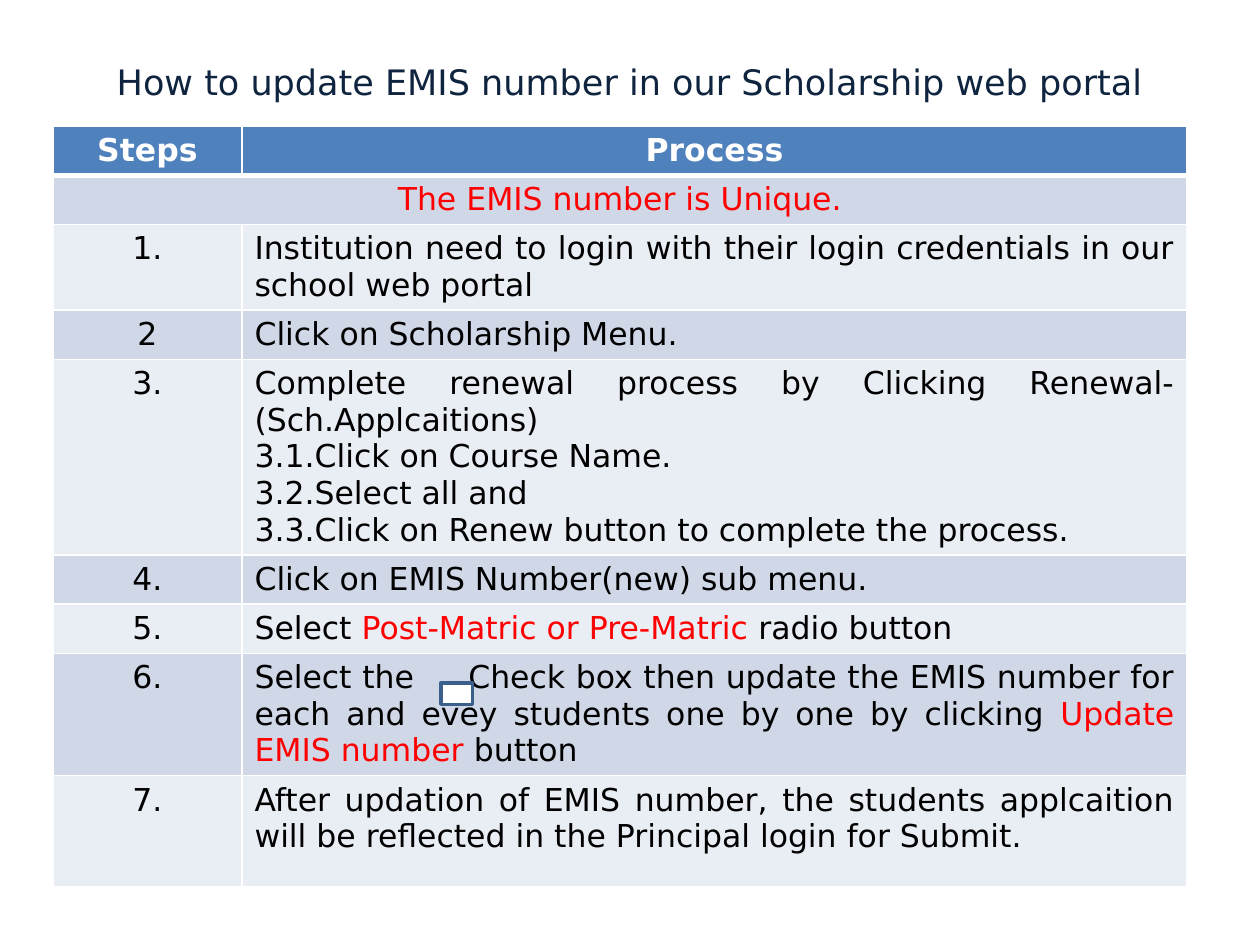
from dataclasses import dataclass

from lxml import etree
from pptx import Presentation
from pptx import util as u
from pptx.dml.color import RGBColor
from pptx.enum import shapes, text
from pptx.oxml.ns import qn


@dataclass(frozen=True)
class Theme:
    font: str = "DejaVu Sans"
    title_size: int = 20
    body_size: int = 18
    navy: str = "0F243E"
    header: str = "4F81BD"
    bands: tuple = ("E9EDF4", "D0D8E8")
    white: str = "FFFFFF"
    black: str = "000000"
    red: str = "FF0000"
    outline: str = "3A5F8C"


theme = Theme()


def format_run(run, size, color, bold=False):
    run.font.name = theme.font
    run.font.size = u.Pt(size)
    run.font.bold = bold
    run.font.color.rgb = RGBColor.from_string(color)


def add_border(cell, side, points):
    line = etree.SubElement(cell._tc.get_or_add_tcPr(), qn(f"a:ln{side}"), w=str(u.Pt(points)))
    fill = etree.SubElement(line, qn("a:solidFill"))
    etree.SubElement(fill, qn("a:srgbClr"), val=theme.white)


presentation = Presentation()
presentation.slide_width, presentation.slide_height = u.Inches(10), u.Inches(7.5)
slide = presentation.slides.add_slide(presentation.slide_layouts[5])

# Title
title = slide.shapes.title
title.left, title.top = u.Inches(0.5), u.Inches(0.3)
title.width, title.height = u.Inches(9), u.Inches(0.7)
title.text_frame.text = "How to update EMIS number in our Scholarship web portal"
title.text_frame.vertical_anchor = text.MSO_ANCHOR.MIDDLE
title.text_frame.paragraphs[0].alignment = text.PP_ALIGN.CENTER
format_run(title.text_frame.paragraphs[0].runs[0], theme.title_size, theme.navy)

# Table content: row height, step, process; text between bars is red
rows = [
    (0.38, "Steps", "Process"),
    (0.38, "|The EMIS number is Unique.|", ""),
    (0.66, "1.", "Institution need to login with their login credentials in our school web portal"),
    (0.38, "2", "Click on Scholarship Menu."),
    (1.51, "3.", "Complete renewal process by Clicking Renewal-(Sch.Applcaitions)\n"
                 "3.1.Click on Course Name.\n"
                 "3.2.Select all and\n"
                 "3.3.Click on Renew button to complete the process."),
    (0.38, "4.", "Click on EMIS Number(new) sub menu."),
    (0.38, "5.", "Select |Post-Matric or Pre-Matric| radio button"),
    (0.94, "6.", "Select the\tCheck box then update the EMIS number for each and evey students "
                 "one by one by clicking |Update EMIS number| button"),
    (0.88, "7.", "After updation of EMIS number, the students applcaition will be reflected "
                 "in the Principal login for Submit."),
]
column_widths = (1.5, 7.5)
check_box_tab = 1.69

table = slide.shapes.add_table(
    len(rows), len(column_widths), u.Inches(0.42), u.Inches(1),
    u.Inches(sum(column_widths)), u.Inches(sum(row[0] for row in rows))).table
for column, width in zip(table.columns, column_widths):
    column.width = u.Inches(width)
table.cell(1, 0).merge(table.cell(1, 1))

for row_index, (height, *contents) in enumerate(rows):
    table.rows[row_index].height = u.Inches(height)
    is_header = row_index == 0
    for column_index, content in enumerate(contents):
        cell = table.cell(row_index, column_index)
        for side in "LRTB":
            thick = (is_header and side == "B") or (row_index == 1 and side == "T")
            add_border(cell, side, 3 if thick else 1)
        cell.fill.solid()
        cell.fill.fore_color.rgb = RGBColor.from_string(
            theme.header if is_header else theme.bands[row_index % 2])
        if not content:
            continue

        centred = is_header or column_index == 0
        for line_index, line in enumerate(content.split("\n")):
            frame = cell.text_frame
            paragraph = frame.add_paragraph() if line_index else frame.paragraphs[0]
            paragraph.alignment = text.PP_ALIGN.CENTER if centred else text.PP_ALIGN.JUSTIFY
            # A tab stop leaves room for the check box
            if "\t" in line:
                tabs = etree.SubElement(paragraph._p.get_or_add_pPr(), qn("a:tabLst"))
                etree.SubElement(tabs, qn("a:tab"), pos=str(u.Inches(check_box_tab)), algn="l")
            for part_index, part in enumerate(line.split("|")):
                if part:
                    run = paragraph.add_run()
                    run.text = part
                    plain = theme.white if is_header else theme.black
                    format_run(run, theme.body_size,
                               theme.red if part_index % 2 else plain, is_header)

# Check box in step 6
check_box = slide.shapes.add_shape(
    shapes.MSO_SHAPE.RECTANGLE, u.Inches(3.5), u.Inches(5.42), u.Inches(0.25), u.Inches(0.17))
check_box.shadow.inherit = False
check_box.fill.solid()
check_box.fill.fore_color.rgb = RGBColor.from_string(theme.white)
check_box.line.color.rgb = RGBColor.from_string(theme.outline)
check_box.line.width = u.Pt(2)

presentation.save("out.pptx")
